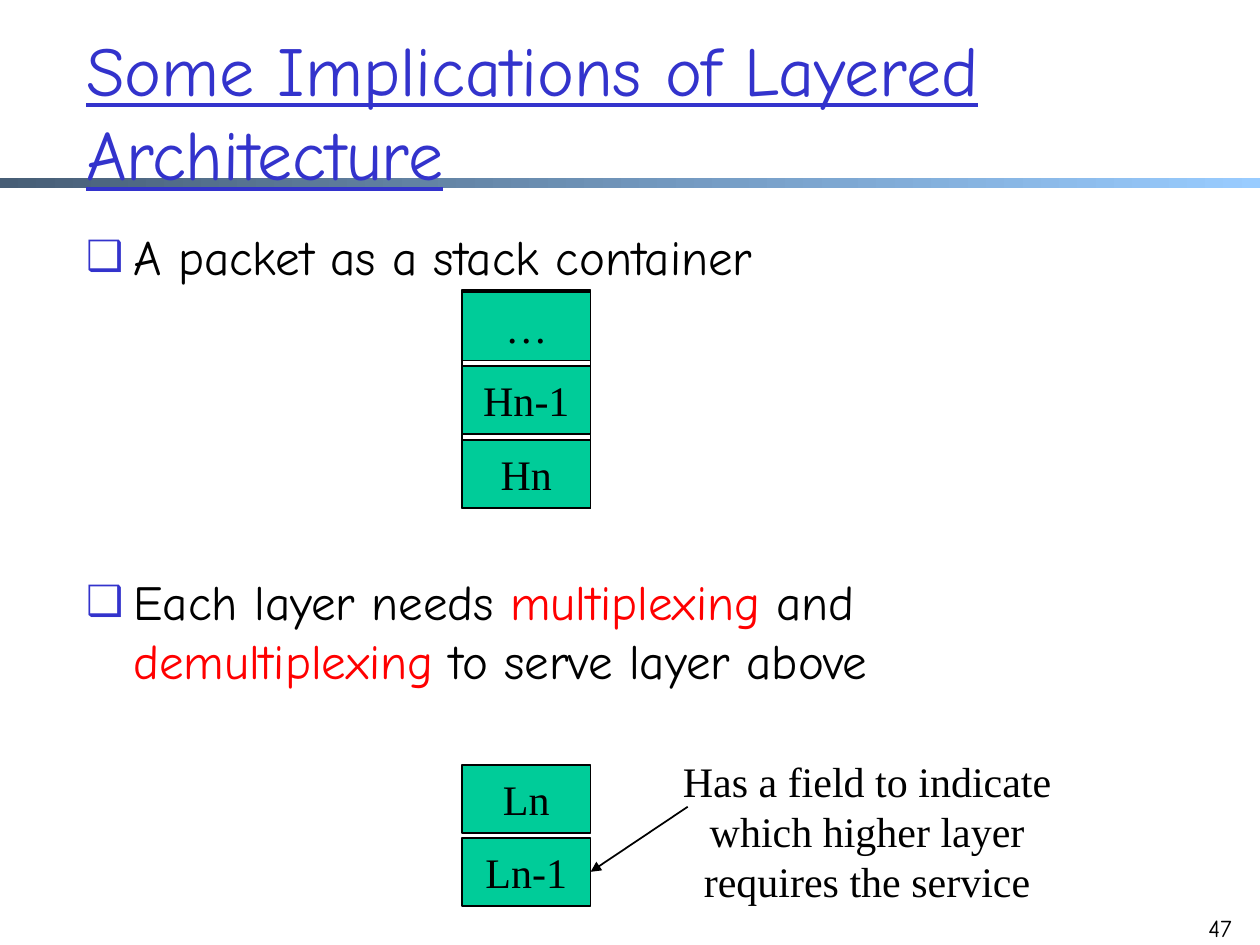
from dataclasses import dataclass

from lxml import etree
from pptx import Presentation
from pptx import util as u
from pptx.dml.color import RGBColor
from pptx.enum import shapes, text
from pptx.oxml import ns

COLORS = {
    "title": "3333CC",
    "text": "000000",
    "accent": "FF0000",
    "box": "00CC99",
    "bar_start": "475E76",
    "bar_end": "99CCFF",
}
SANS, SERIF = "Comic Neue", "Times New Roman"
BOX_LEFT, BOX_WIDTH, BOX_HEIGHT = 264, 73.5, 39


@dataclass
class Stack:
    labels: list[str]
    top: float
    pitch: float


HEADERS = Stack(["…", "Hn-1", "Hn"], top=167, pitch=42.2)
LAYERS = Stack(["Ln", "Ln-1"], top=437.1, pitch=41.6)

BULLETS = [
    [("A packet as a stack container", "text")],
    [
        ("Each layer needs ", "text"),
        ("multiplexing ", "accent"),
        ("and ", "text"),
        ("demultiplexing", "accent"),
        (" to serve layer above", "text"),
    ],
]


def color(name: str) -> RGBColor:
    return RGBColor.from_string(COLORS[name])


def place(shape, left: float, top: float, width: float, height: float) -> None:
    shape.left, shape.top = u.Pt(left), u.Pt(top)
    shape.width, shape.height = u.Pt(width), u.Pt(height)


def style(span, size: float, face: str, shade: str = "text") -> None:
    span.font.size = u.Pt(size)
    span.font.name = face
    span.font.color.rgb = color(shade)


def write(shape, words: str, size: float, face: str, align) -> None:
    frame = shape.text_frame
    frame.text = words
    frame.word_wrap = True
    para = frame.paragraphs[0]
    para.alignment = align
    style(para.runs[0], size, face)


def add_rectangle(page, left: float, top: float, width: float, height: float):
    box = page.shapes.add_shape(
        shapes.MSO_SHAPE.RECTANGLE, u.Pt(left), u.Pt(top), u.Pt(width), u.Pt(height)
    )
    box.shadow.inherit = False
    box.fill.background()
    box.line.color.rgb = color("text")
    box.line.width = u.Pt(1)
    return box


def add_stack(page, stack: Stack) -> list:
    boxes = []
    for row, label in enumerate(stack.labels):
        top = stack.top + row * stack.pitch
        box = add_rectangle(page, BOX_LEFT, top, BOX_WIDTH, BOX_HEIGHT)
        box.fill.solid()
        box.fill.fore_color.rgb = color("box")
        write(box, label, 24, SERIF, text.PP_ALIGN.CENTER)
        box.text_frame.vertical_anchor = text.MSO_ANCHOR.MIDDLE
        boxes.append(box)
    return boxes


def add_text(page, area: tuple, words: str, size: float, face: str, align) -> None:
    box = page.shapes.add_textbox(*(u.Pt(length) for length in area))
    write(box, words, size, face, align)


def add_bar(page) -> None:
    bar = add_rectangle(page, 0, 101.7, 720, 6)
    bar.line.fill.background()
    bar.fill.gradient()
    bar.fill.gradient_angle = 0
    for stop, name in zip(bar.fill.gradient_stops, ("bar_start", "bar_end")):
        stop.color.rgb = color(name)


def fill_title(title) -> None:
    place(title, 42, 18, 612, 90)
    write(title, "Some Implications of Layered Architecture", 40, SANS, text.PP_ALIGN.LEFT)
    frame = title.text_frame
    frame.auto_size = text.MSO_AUTO_SIZE.NONE
    frame.vertical_anchor = text.MSO_ANCHOR.MIDDLE
    font = frame.paragraphs[0].runs[0].font
    font.color.rgb = color("title")
    font.underline = True


def set_bullet(para) -> None:
    props = para._p.get_or_add_pPr()
    props.set("marL", str(u.Pt(27)))
    props.set("indent", str(-u.Pt(27)))
    shade = etree.SubElement(props, ns.qn("a:buClr"))
    etree.SubElement(shade, ns.qn("a:srgbClr")).set("val", COLORS["title"])
    etree.SubElement(props, ns.qn("a:buSzPct")).set("val", "85000")
    etree.SubElement(props, ns.qn("a:buChar")).set("char", "❑")


def fill_body(body) -> None:
    place(body, 42, 126, 612, 366)
    frame = body.text_frame
    frame.auto_size = text.MSO_AUTO_SIZE.NONE
    for row, pieces in enumerate(BULLETS):
        para = frame.add_paragraph() if row else frame.paragraphs[0]
        para.space_before = u.Pt(163.5 if row else 5.6)
        set_bullet(para)
        for words, shade in pieces:
            span = para.add_run()
            span.text = words
            style(span, 28, SANS, shade)


def add_arrow(page, left: float, top: float, target) -> None:
    arrow = page.shapes.add_connector(
        shapes.MSO_CONNECTOR.STRAIGHT, u.Pt(left), u.Pt(top), 0, 0
    )
    arrow.end_connect(target, 3)
    arrow.line.color.rgb = color("text")
    arrow.line.width = u.Pt(1)
    head = etree.SubElement(arrow.line._get_or_add_ln(), ns.qn("a:tailEnd"))
    head.set("type", "triangle")
    etree.SubElement(arrow._element.spPr, ns.qn("a:effectLst"))


def main() -> None:
    deck = Presentation()
    deck.slide_width, deck.slide_height = u.Pt(720), u.Pt(540)
    page = deck.slides.add_slide(deck.slide_layouts[1])
    title, body = page.placeholders

    add_bar(page)
    for holder in (title, body):
        page.shapes._spTree.append(holder._element)
    fill_title(title)
    fill_body(body)
    add_text(page, (675, 518, 36, 36), "47", 14, SANS, text.PP_ALIGN.RIGHT)

    add_rectangle(page, BOX_LEFT, 165.6, BOX_WIDTH, 124.8)
    add_stack(page, HEADERS)
    layers = add_stack(page, LAYERS)
    add_text(
        page,
        (377, 428, 237, 94),
        "Has a field to indicate which higher layer requires the service",
        24,
        SERIF,
        text.PP_ALIGN.CENTER,
    )
    add_arrow(page, 393, 461, layers[-1])
    deck.save("out.pptx")


if __name__ == "__main__":
    main()
